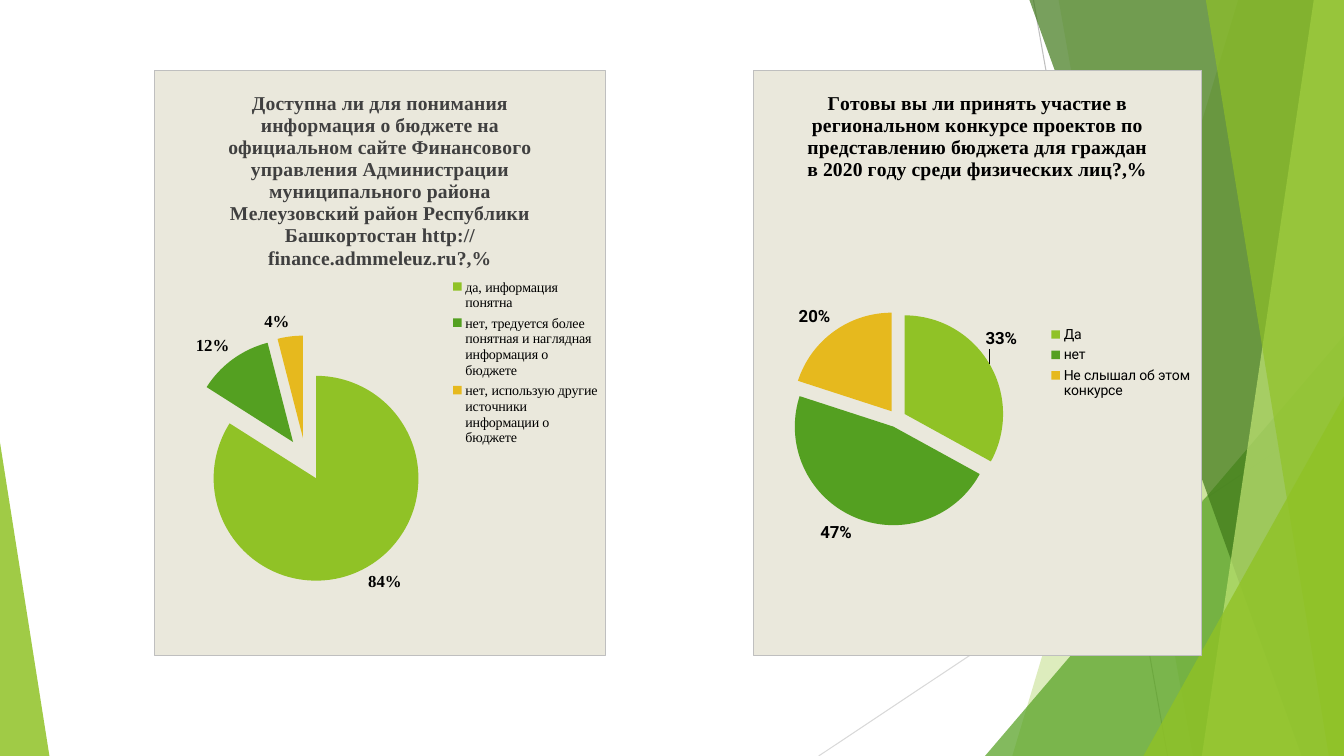
from copy import deepcopy
from dataclasses import dataclass

from lxml.etree import SubElement as Sub
from pptx import Presentation
from pptx.chart.data import CategoryChartData as Data
from pptx.dml.color import RGBColor as RGB
from pptx.enum.chart import XL_CHART_TYPE as Kind
from pptx.enum.chart import XL_LABEL_POSITION as Spot
from pptx.enum.chart import XL_LEGEND_POSITION as Side
from pptx.enum.shapes import MSO_CONNECTOR as Link
from pptx.enum.shapes import MSO_SHAPE as Form
from pptx.oxml import parse_xml
from pptx.oxml.ns import nsdecls, qn
from pptx.util import Inches, Pt


@dataclass(frozen=True)
class Theme:
    lime: str = "90C226"
    green: str = "54A021"
    gold: str = "E6B91E"
    moss: str = "3F7819"
    pale: str = "C0E474"
    panel: str = "EAE8DC"
    edge: str = "BFBFBF"
    mist: str = "D9D9D9"
    black: str = "000000"
    grey: str = "404040"
    serif: str = "Times New Roman"
    sans: str = "Roboto"
    head: int = 14
    label: int = 12
    key: int = 10
    rule: float = 0.75


THEME = Theme()
WIDE, HIGH = 13.33, 7.5
EXT = "http://schemas.microsoft.com/office/drawing/2012/chart"


def style(font, face, size, color, bold=False):
    font.name = face
    font.size = Pt(size)
    font.bold = bold
    font.color.rgb = RGB.from_string(color)


def tint(shape, color, alpha):
    shape.shadow.inherit = False
    shape.fill.solid()
    shape.fill.fore_color.rgb = RGB.from_string(color)
    shape.line.fill.background()
    node = shape._element.spPr.find(".//" + qn("a:srgbClr"))
    Sub(node, qn("a:alpha"), val=str(alpha * 1000))


def ray(slide, start, end, color):
    ends = [Inches(n) for n in (*start, *end)]
    line = slide.shapes.add_connector(Link.STRAIGHT, *ends)
    line.line.color.rgb = RGB.from_string(color)
    line.line.width = Pt(THEME.rule)
    Sub(line._element.spPr, qn("a:effectLst"))


def veil(slide, top, foot, color, alpha):
    pen = slide.shapes.build_freeform(Inches(top), 0)
    edge = [(WIDE, 0), (WIDE, HIGH), (foot, HIGH)]
    pen.add_line_segments([(Inches(x), Inches(y)) for x, y in edge])
    tint(pen.convert_to_shape(), color, alpha)


def wedge(slide, left, top, width, peak, color, alpha):
    box = [Inches(n) for n in (left, top, width, HIGH - top)]
    shape = slide.shapes.add_shape(Form.ISOSCELES_TRIANGLE, *box)
    shape.adjustments[0] = peak
    tint(shape, color, alpha)


def layout(box, inner=False):
    target = '<c:layoutTarget val="inner"/>' if inner else ""
    modes = "".join(f'<c:{n}Mode val="edge"/>' for n in "xy")
    sizes = "".join(f'<c:{n} val="{v}"/>' for n, v in zip("xywh", box))
    return parse_xml(
        f'<c:layout {nsdecls("c")}><c:manualLayout>{target}{modes}{sizes}'
        "</c:manualLayout></c:layout>"
    )


def place(parent, index, node):
    for old in parent.findall(qn("c:layout")):
        parent.remove(old)
    parent.insert(index, node)


def frame(root):
    root.find(qn("c:chart")).addnext(parse_xml(
        f'<c:spPr {nsdecls("c", "a")}>'
        f'<a:solidFill><a:srgbClr val="{THEME.panel}"/></a:solidFill>'
        f'<a:ln w="{Pt(THEME.rule)}"><a:solidFill>'
        f'<a:srgbClr val="{THEME.edge}"/></a:solidFill></a:ln></c:spPr>'
    ))


def title(chart, text, color):
    chart.has_title = True
    run = chart.chart_title.text_frame.paragraphs[0].add_run()
    run.text = text
    style(run.font, THEME.serif, THEME.head, color, True)


def legend(chart, face, box):
    chart.has_legend = True
    key = chart.legend
    key.position = Side.RIGHT
    key.include_in_layout = False
    style(key.font, face, THEME.key, THEME.black)
    place(key._element, 1, layout(box))


def slices(plot, face, burst):
    plot.vary_by_categories = True
    row = plot.series[0]
    for i, color in enumerate((THEME.lime, THEME.green, THEME.gold)):
        fill = row.points[i].format.fill
        fill.solid()
        fill.fore_color.rgb = RGB.from_string(color)
    first = row._element.find(qn("c:dPt"))
    first.addprevious(parse_xml(
        f'<c:explosion {nsdecls("c")} val="{burst}"/>'))
    tags = row.data_labels
    tags.show_value = False
    tags.show_percentage = True
    tags.number_format = "0%"
    tags.number_format_is_linked = False
    tags.position = Spot.OUTSIDE_END
    style(tags.font, face, THEME.label, THEME.black, True)
    return tags


def nudge(tags, x, y, w, h):
    shows = "".join(
        f'<c:show{n} val="{int(n == "Percent")}"/>'
        for n in ("LegendKey", "Val", "CatName", "SerName", "Percent",
                  "BubbleSize"))
    tag = parse_xml(
        f'<c:dLbl {nsdecls("c")}><c:idx val="0"/><c:layout><c:manualLayout>'
        f'<c:x val="{x}"/><c:y val="{y}"/></c:manualLayout></c:layout>'
        '<c:numFmt formatCode="0%" sourceLinked="0"/>'
        f'<c:dLblPos val="outEnd"/>{shows}<c:extLst>'
        f'<c:ext uri="{{CE6537A1-D6FC-4f65-9D91-7224C49458BB}}" '
        f'xmlns:c15="{EXT}"><c15:layout><c:manualLayout>'
        f'<c:w val="{w}"/><c:h val="{h}"/></c:manualLayout></c15:layout>'
        "</c:ext></c:extLst></c:dLbl>"
    )
    root = tags._element
    text = deepcopy(root.find(qn("c:txPr")))
    tag.find(qn("c:numFmt")).addnext(text)
    root.insert(0, tag)


def pie(slide, left, width, text, color, face, shares, burst, area, key):
    data = Data()
    data.categories = list(shares)
    data.add_series("Series 1", list(shares.values()))
    box = [Inches(n) for n in (left, 0.69, width, 5.82)]
    chart = slide.shapes.add_chart(Kind.PIE, *box, data).chart
    style(chart.font, face, THEME.key, THEME.black)
    title(chart, text, color)
    legend(chart, face, key)
    root = chart._chartSpace
    place(root.find(".//" + qn("c:plotArea")), 0, layout(area, True))
    frame(root)
    return slices(chart.plots[0], face, burst)


def scene(slide):
    ray(slide, (10.25, 0), (11.58, HIGH), THEME.edge)
    ray(slide, (WIDE, 4.03), (8.12, HIGH), THEME.mist)
    veil(slide, 12.28, 10.04, THEME.lime, 30)
    veil(slide, 10.5, 11.83, THEME.lime, 20)
    wedge(slide, 9.77, 3.33, 3.56, 1, THEME.green, 72)
    veil(slide, 10.21, 12.91, THEME.moss, 70)
    veil(slide, 13.03, 11.92, THEME.pale, 70)
    veil(slide, 11.96, 13.18, THEME.lime, 65)
    wedge(slide, 11.34, 3.93, 1.99, 1, THEME.lime, 80)
    wedge(slide, 0, 4.39, 0.49, 0, THEME.lime, 85)


def main():
    deck = Presentation()
    deck.slide_width, deck.slide_height = Inches(WIDE), Inches(HIGH)
    slide = deck.slides.add_slide(deck.slide_layouts[6])
    scene(slide)
    pie(
        slide, 1.53, 4.48,
        "Доступна ли для понимания информация о бюджете на официальном сайте "
        "Финансового управления Администрации муниципального района "
        "Мелеузовский район Республики Башкортостан "
        "http://finance.admmeleuz.ru?,%",
        THEME.grey, THEME.serif,
        {
            "да, информация понятна": 84,
            "нет, тредуется более понятная и наглядная информация о бюджете": 12,
            "нет, использую другие источники информации о бюджете": 4,
        },
        21, (0.06, 0.45, 0.55, 0.43), (0.66, 0.35, 0.33, 0.3),
    )
    tags = pie(
        slide, 7.47, 4.45,
        "Готовы вы ли принять участие в региональном конкурсе проектов по "
        "представлению бюджета для граждан в 2020 году среди физических "
        "лиц?,%",
        THEME.black, THEME.sans,
        {"Да": 33, "нет": 47, "Не слышал об этом конкурсе": 20},
        9, (0.08, 0.41, 0.48, 0.37), (0.65, 0.43, 0.34, 0.14),
    )
    nudge(tags, -0.02, -0.02, 0.05, 0.08)
    deck.save("out.pptx")


if __name__ == "__main__":
    main()
